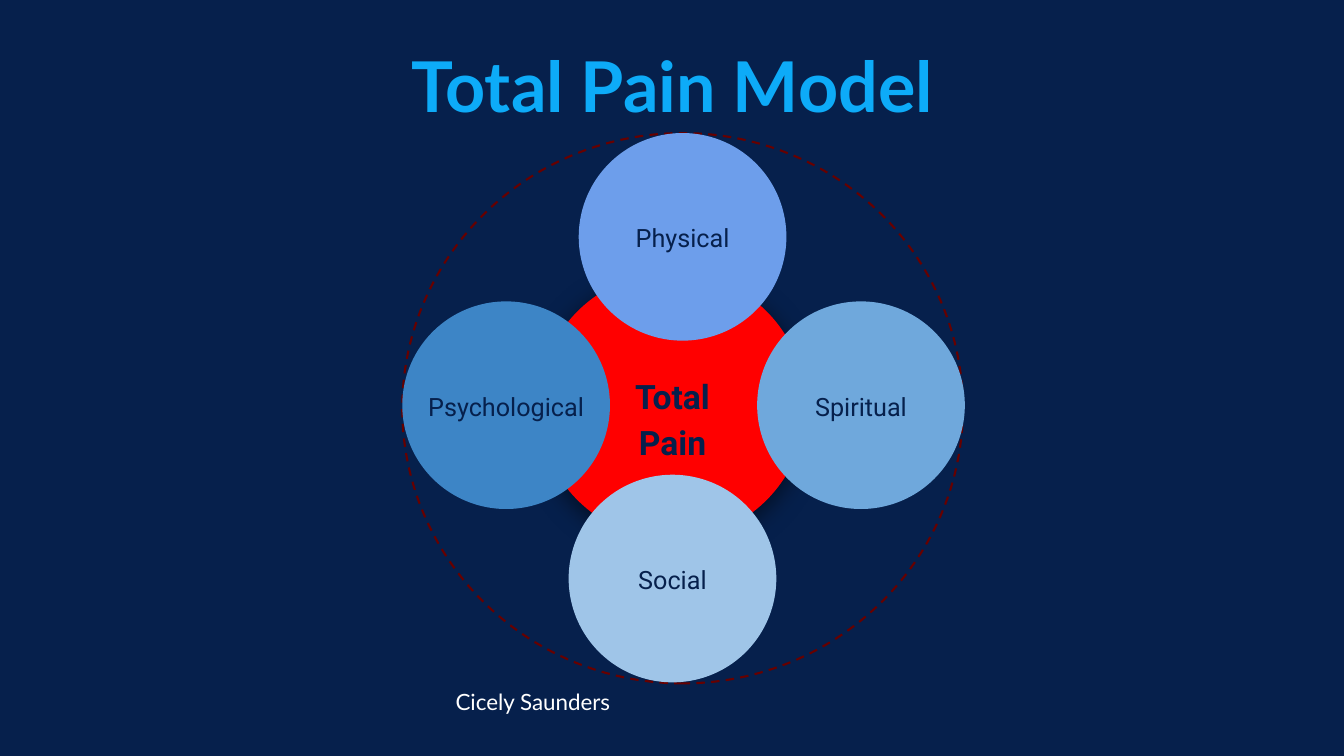
from lxml import etree
from pptx import Presentation
from pptx.dml.color import RGBColor
from pptx.enum.dml import MSO_LINE
from pptx.enum.shapes import MSO_SHAPE
from pptx.enum.text import MSO_ANCHOR, PP_ALIGN
from pptx.oxml.ns import qn
from pptx.util import Inches, Pt

OVAL, DASH = MSO_SHAPE.OVAL, MSO_LINE.DASH
MIDDLE, CENTER, LEFT = MSO_ANCHOR.MIDDLE, PP_ALIGN.CENTER, PP_ALIGN.LEFT

TITLE = "Total Pain Model"
CAPTION = "Cicely Saunders"
CORE = ["Total", "Pain"]
# label, fill, left, top of each circle, from back to front
DIMENSIONS = [
    ("Psychological", "3D85C6", 3.99, 2.99),
    ("Social", "9FC5E8", 5.64, 4.71),
    ("Spiritual", "6FA8DC", 7.51, 2.99),
    ("Physical", "6D9EEB", 5.74, 1.32),
]


class Theme:
    navy, title, white = "06204C", "0DABF8", "FFFFFF"
    core, ring, shadow = "FF0000", "660000", "000000"
    heading_font, label_font = "Lato", "Roboto"
    title_size, core_size, label_size, caption_size = 50, 24, 18, 16


CIRCLE = 2.06
LABEL_HEIGHT = 1.07
LABEL_OFFSET = 0.48


def box(left, top, width, height):
    return [Inches(v) for v in (left, top, width, height)]


def write(tf, lines, font, size, color, bold=False, align=CENTER,
          inset=(0.13, 0.13), spacing=None):
    """Fill a text frame, one paragraph a line; inset is (sides, top and bottom)."""
    tf.word_wrap = True
    tf.vertical_anchor = MIDDLE
    tf.margin_left = tf.margin_right = Inches(inset[0])
    tf.margin_top = tf.margin_bottom = Inches(inset[1])
    for i, line in enumerate(lines):
        p = tf.add_paragraph() if i else tf.paragraphs[0]
        p.alignment = align
        if spacing:
            p.line_spacing = spacing
        r = p.add_run()
        r.text = line
        r.font.name, r.font.size, r.font.bold = font, Pt(size), bold
        r.font.color.rgb = RGBColor.from_string(color)


def add_circle(shapes, place, fill):
    sp = shapes.add_shape(OVAL, *box(*place))
    sp.shadow.inherit = False
    sp.fill.solid()
    sp.fill.fore_color.rgb = RGBColor.from_string(fill)
    sp.line.fill.background()
    return sp


def add_label(shapes, place, lines, size, bold=False):
    sp = shapes.add_textbox(*box(*place))
    write(sp.text_frame, lines, Theme.label_font, size, Theme.navy, bold, spacing=1.15)


def add_soft_shadow(sp):
    effects = sp._element.spPr.find(qn("a:effectLst"))
    shadow = etree.SubElement(effects, qn("a:outerShdw"), blurRad=str(Pt(18)),
                              dist=str(Pt(4)), dir="5400000", algn="bl", rotWithShape="0")
    color = etree.SubElement(shadow, qn("a:srgbClr"), val=Theme.shadow)
    etree.SubElement(color, qn("a:alpha"), val="55000")


def add_ring(s):
    ring = s.shapes.add_shape(OVAL, *box(4.04, 1.27, 5.46, 5.56))
    ring.rotation = 270
    ring.shadow.inherit = False
    ring.fill.background()
    ring.line.color.rgb = RGBColor.from_string(Theme.ring)
    ring.line.width = Pt(1.5)
    ring.line.dash_style = DASH


def add_core(s):
    group = s.shapes.add_group_shape()
    add_soft_shadow(add_circle(group.shapes, (5.34, 2.7, 2.65, 2.65), Theme.core))
    add_label(group.shapes, (5.79, 3.52, 1.76, 1.21), CORE, Theme.core_size, True)


def add_dimension(s, label, fill, left, top):
    group = s.shapes.add_group_shape()
    add_circle(group.shapes, (left, top, CIRCLE, CIRCLE), fill)
    add_label(group.shapes, (left, top + LABEL_OFFSET, CIRCLE, LABEL_HEIGHT),
              [label], Theme.label_size)


def main():
    prs = Presentation()
    prs.slide_width, prs.slide_height = Inches(13.33), Inches(7.5)
    s = prs.slides.add_slide(prs.slide_layouts[5])
    s.background.fill.solid()
    s.background.fill.fore_color.rgb = RGBColor.from_string(Theme.navy)

    title = s.shapes.title
    title.left, title.top, title.width, title.height = box(0.67, 0.25, 12, 1.17)
    write(title.text_frame, [TITLE], Theme.heading_font, Theme.title_size,
          Theme.title, bold=True, inset=(0, 0.01))

    caption = s.shapes.add_textbox(*box(4.42, 6.64, 8.25, 0.64))
    write(caption.text_frame, [CAPTION], Theme.heading_font, Theme.caption_size,
          Theme.white, align=LEFT, inset=(0.1, 0.05))

    add_ring(s)
    add_core(s)
    for dimension in DIMENSIONS:
        add_dimension(s, *dimension)
    prs.save("out.pptx")


if __name__ == "__main__":
    main()
